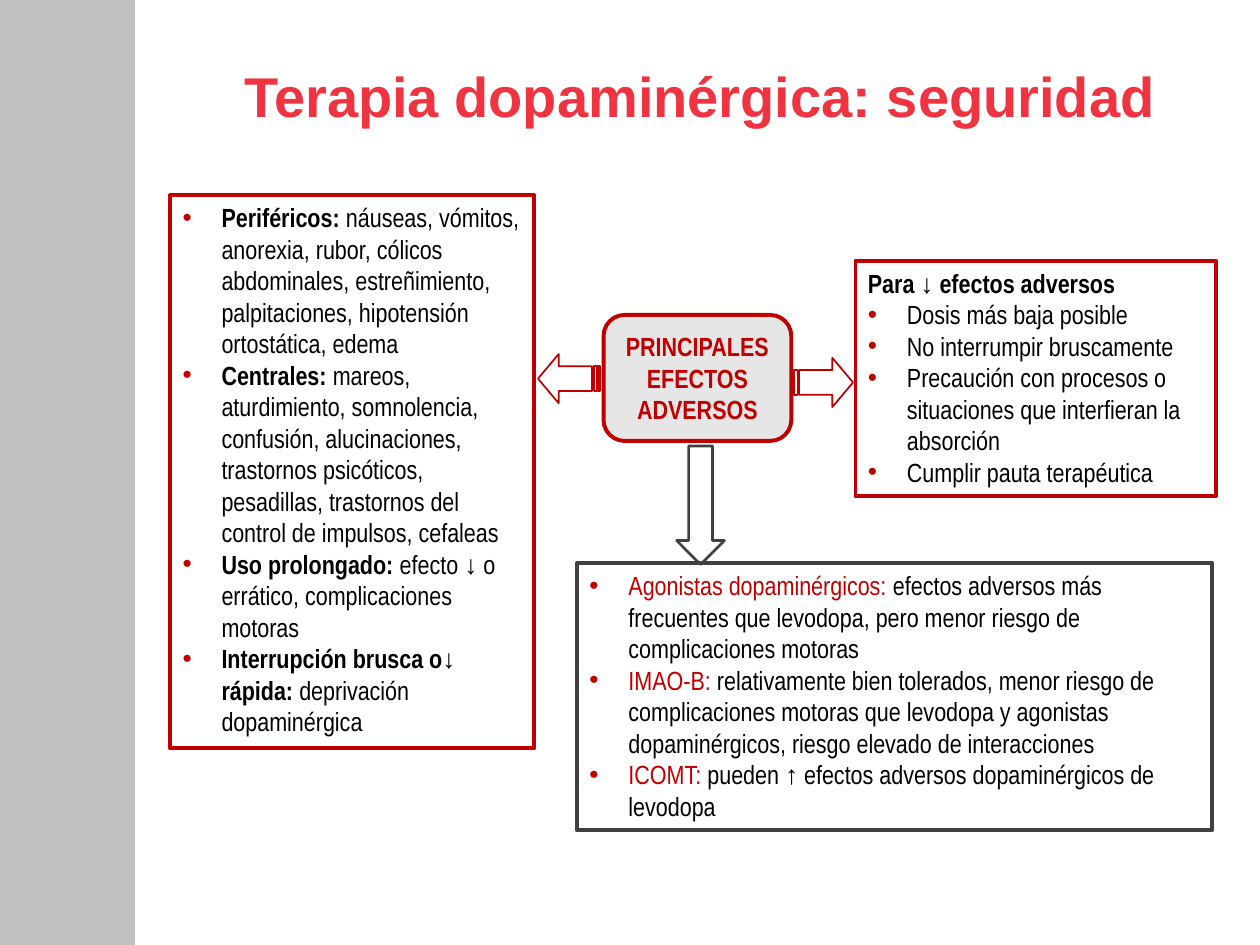
"""Build the slide on the safety of dopaminergic therapy."""
from lxml.etree import SubElement
from pptx import Presentation
from pptx.dml.color import RGBColor
from pptx.enum.shapes import MSO_SHAPE
from pptx.enum.text import MSO_ANCHOR, PP_ALIGN
from pptx.oxml.ns import qn
from pptx.util import Inches, Pt

RED, DARK, BLACK, CORAL = "C00000", "404040", "000000", "EF3340"
NARROW = "Arial Narrow"
hue = RGBColor.from_string

deck = Presentation()
deck.slide_width, deck.slide_height = Inches(10), Inches(7.5)
slide = deck.slides.add_slide(deck.slide_layouts[6])
col, row = deck.slide_width / 100, deck.slide_height / 75


def draw(kind, grid, line, width, fill=None):
    """Add a preset shape placed in columns and rows."""
    x, y, w, h = grid
    form = slide.shapes.add_shape(kind, int(x * col), int(y * row), int(w * col), int(h * row))
    form.shadow.inherit = False
    form.line.color.rgb = hue(line)
    form.line.width = Pt(width)
    if fill:
        form.fill.solid()
        form.fill.fore_color.rgb = hue(fill)
    else:
        form.fill.background()
    form.text_frame.word_wrap = True
    return form


def write(para, parts, size, face, align=PP_ALIGN.LEFT):
    """Fill a paragraph with runs of text, colour and weight."""
    para.alignment = align
    para.font.size, para.font.name = Pt(size), face
    for text, tint, bold in parts:
        run = para.add_run()
        run.text = text
        run.font.color.rgb, run.font.bold = hue(tint), bold


draw(MSO_SHAPE.RECTANGLE, (0, 0, 10.7, 75), "C0C0C0", 0.75, "C0C0C0")

title = slide.shapes.add_textbox(int(15.5 * col), int(4.4 * row), int(80.1 * col), int(7.5 * row))
title.text_frame.word_wrap = True
title.text_frame.vertical_anchor = MSO_ANCHOR.TOP
write(title.text_frame.paragraphs[0], [("Terapia dopaminérgica: seguridad", CORAL, True)],
      32, "Arial", PP_ALIGN.CENTER)

cards = [
    ((67.9, 20.7, 28.6, 18.7), RED, BLACK, True, [
        ("Para ↓ efectos adversos", ""),
        ("", "Dosis más baja posible"),
        ("", "No interrumpir bruscamente"),
        ("", "Precaución con procesos o situaciones que interfieran la absorción"),
        ("", "Cumplir pauta terapéutica")]),
    ((13.5, 15.5, 28.9, 43.9), RED, BLACK, True, [
        ("Periféricos: ", "náuseas, vómitos, anorexia, rubor, cólicos abdominales, "
         "estreñimiento, palpitaciones, hipotensión ortostática, edema"),
        ("Centrales: ", "mareos, aturdimiento, somnolencia, confusión, alucinaciones, "
         "trastornos psicóticos, pesadillas, trastornos del control de impulsos, cefaleas"),
        ("Uso prolongado: ", "efecto ↓ o errático, complicaciones motoras"),
        ("Interrupción brusca o↓ rápida: ", "deprivación dopaminérgica")]),
    ((45.8, 44.7, 50.4, 21.2), DARK, RED, False, [
        ("Agonistas dopaminérgicos: ", "efectos adversos más frecuentes que levodopa, "
         "pero menor riesgo de complicaciones motoras"),
        ("IMAO-B:", " relativamente bien tolerados, menor riesgo de complicaciones motoras "
         "que levodopa y agonistas dopaminérgicos, riesgo elevado de interacciones"),
        ("ICOMT: ", "pueden ↑ efectos adversos dopaminérgicos de levodopa")]),
]
for grid, line, tint, bold, items in cards:
    frame = draw(MSO_SHAPE.RECTANGLE, grid, line, 2.25).text_frame
    frame.vertical_anchor = MSO_ANCHOR.TOP
    for i, (head, tail) in enumerate(items):
        para = frame.add_paragraph() if i else frame.paragraphs[0]
        if tail:
            props = para._p.get_or_add_pPr()
            props.set("marL", str(int(3.1 * col)))
            props.set("indent", str(int(-3.1 * col)))
            SubElement(SubElement(props, qn("a:buClr")), qn("a:srgbClr"), val=RED)
            SubElement(props, qn("a:buFont"), typeface="Arial")
            SubElement(props, qn("a:buChar"), char="•")
        parts = [(head, tint, bold), (tail, BLACK, False)]
        write(para, [part for part in parts if part[0]], 15, NARROW)

hub = draw(MSO_SHAPE.ROUNDED_RECTANGLE, (47.9, 25, 14.9, 10), RED, 2.25, "E6E6E6").text_frame
hub.vertical_anchor = MSO_ANCHOR.MIDDLE
write(hub.paragraphs[0], [("PRINCIPALES EFECTOS ADVERSOS", RED, True)], 15, NARROW, PP_ALIGN.CENTER)

for x, y, turn in [(42.7, 28.1, 180), (62.8, 28.4, 0)]:
    arrow = draw(MSO_SHAPE.STRIPED_RIGHT_ARROW, (x, y, 4.9, 3.9), RED, 1)
    arrow.rotation = turn
    arrow.adjustments[0], arrow.adjustments[1] = 0.5, 0.42
draw(MSO_SHAPE.DOWN_ARROW, (53.7, 35.4, 3.8, 9.4), DARK, 1.5)

deck.save("out.pptx")
